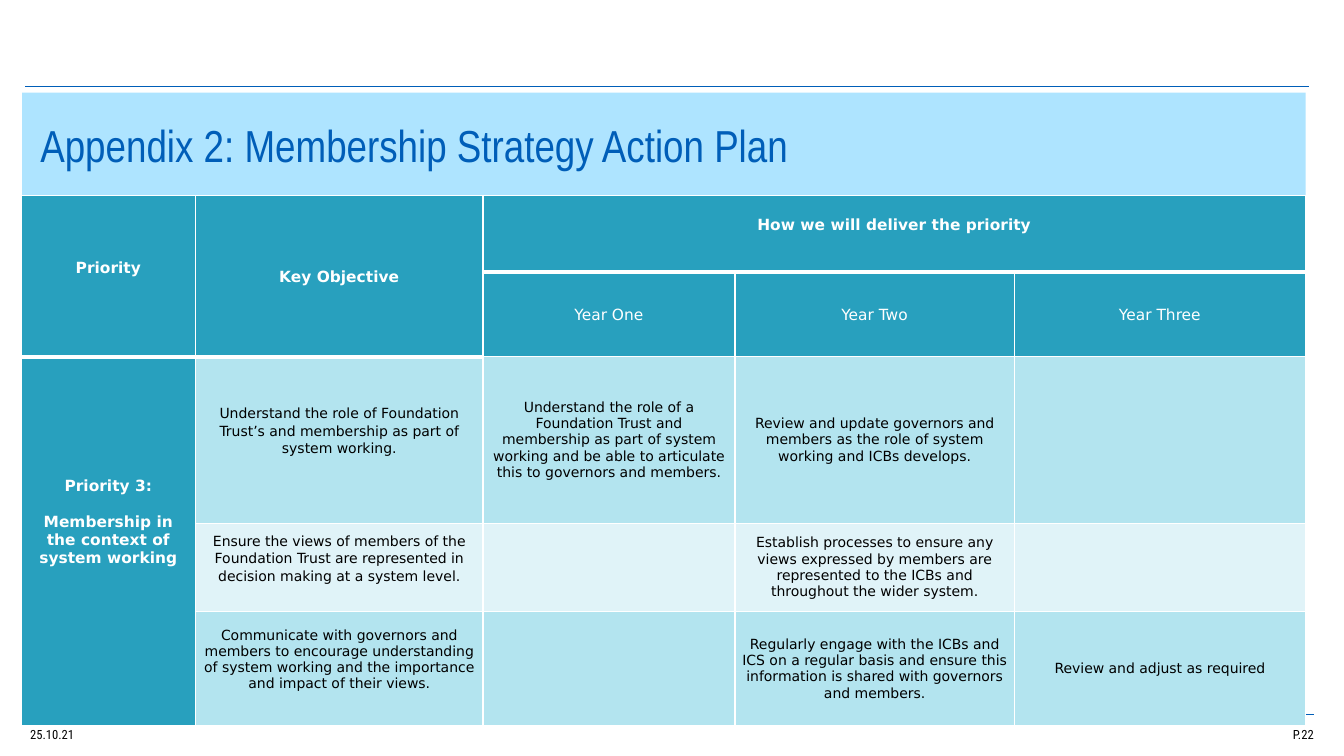
from pptx import Presentation
from pptx.dml.color import RGBColor
from pptx.enum.shapes import MSO_CONNECTOR as Conn, MSO_SHAPE as Shape
from pptx.enum.text import MSO_ANCHOR as Anchor, MSO_AUTO_SIZE as Fit, PP_ALIGN as Align
from pptx.oxml import parse_xml
from pptx.oxml.ns import nsdecls
from pptx.util import Inches, Pt

HUES = {"blue": "005EB8", "sky": "AEE4FF", "teal": "28A0BE", "pale": "B3E4EF",
        "mist": "E0F3F8", "white": "FFFFFF", "black": "000000"}


def hue(name):
    return RGBColor.from_string(HUES[name])


def style(par, face, size, name, bold=False, align=Align.LEFT):
    par.alignment = align
    for run in par.runs:
        font = run.font
        font.name, font.size, font.bold = face, Pt(size), bold
        font.color.rgb = hue(name)


prs = Presentation()
prs.slide_width, prs.slide_height = Inches(13.33), Inches(7.5)
slide = prs.slides.add_slide(prs.slide_layouts[5])
shapes = slide.shapes

# Rules above and below the content
for left, top in [(0.25, 0.86), (0.3, 7.09)]:
    rule = shapes.add_connector(Conn.STRAIGHT, Inches(left), Inches(top),
                                Inches(left + 12.73), Inches(top))
    rule.line.color.rgb = hue("blue")
    rule.line.width = Pt(1)
    rule._element.spPr.append(parse_xml(f"<a:effectLst {nsdecls('a')}/>"))

# Date and page number
for left, text, align in [(0.3, "25.10.21", Align.LEFT), (11.67, "P.22", Align.RIGHT)]:
    box = shapes.add_textbox(Inches(left), Inches(7.2), Inches(1.36), Inches(0.21))
    frame = box.text_frame
    frame.word_wrap = True
    frame.vertical_anchor = Anchor.MIDDLE
    frame.margin_left = frame.margin_right = 0
    frame.text = text
    par = frame.paragraphs[0]
    par.line_spacing = 0.7
    style(par, "Roboto Condensed", 9, "black", align=align)

# Light panel with the title on top
panel = shapes.add_shape(Shape.RECTANGLE, Inches(0.22), Inches(0.92),
                         Inches(12.73), Inches(6.28))
panel.shadow.inherit = False
panel.fill.solid()
panel.fill.fore_color.rgb = hue("sky")
panel.line.fill.background()

title = shapes.title
title.left, title.top = Inches(0.3), Inches(1.11)
title.width, title.height = Inches(11.45), Inches(0.64)
title.text_frame.text = "Appendix 2: Membership Strategy Action Plan"
title.text_frame.auto_size = Fit.NONE
title.text_frame.vertical_anchor = Anchor.MIDDLE
style(title.text_frame.paragraphs[0], "Arial Narrow", 32, "blue")
panel._element.addnext(title._element)

# Action plan table
WIDE = [1.73, 2.85, 2.5, 2.77, 2.89]
HIGH = [0.76, 0.84, 1.65, 0.88, 1.13]
ROWS = [
    ["Priority", "Key Objective", "How we will deliver the priority", "", ""],
    ["", "", "Year One", "Year Two", "Year Three"],
    ["Priority 3:\nMembership in the context of system working",
     "Understand the role of Foundation Trust’s and membership as part of system working.",
     "Understand the role of a Foundation Trust and membership as part of system working "
     "and be able to articulate this to governors and members.",
     "Review and update governors and members as the role of system working and ICBs develops.",
     ""],
    ["", "Ensure the views of members of the Foundation Trust are represented in decision "
     "making at a system level.", "",
     "Establish processes to ensure any views expressed by members are represented to the "
     "ICBs and throughout the wider system.", ""],
    ["", "Communicate with governors and members to encourage understanding of system "
     "working and the importance and impact of their views.", "",
     "Regularly engage with the ICBs and ICS on a regular basis and ensure this information "
     "is shared with governors and members.", "Review and adjust as required"],
]
# Bottom margins that lift the text above the middle
LIFT = {(0, 0): 0.18, (0, 2): 0.18, (2, 0): 0.38, (2, 1): 0.18, (3, 1): 0.18, (4, 1): 0.18}

grid = shapes.add_table(5, 5, Inches(0.21), Inches(1.94),
                        Inches(sum(WIDE)), Inches(sum(HIGH))).table
for col, wide in zip(grid.columns, WIDE):
    col.width = Inches(wide)
for row, high in zip(grid.rows, HIGH):
    row.height = Inches(high)
for r1, c1, r2, c2 in [(0, 0, 1, 0), (0, 1, 1, 1), (0, 2, 0, 4), (2, 0, 4, 0)]:
    grid.cell(r1, c1).merge(grid.cell(r2, c2))

for r, texts in enumerate(ROWS):
    for c, text in enumerate(texts):
        cell = grid.cell(r, c)
        head = r < 2 or c == 0
        cell.fill.solid()
        cell.fill.fore_color.rgb = hue("teal" if head else "mist" if r == 3 else "pale")

        # White borders, thick below the header cells
        thick = r == 0 or (r == 1 and c < 2)
        props = cell._tc.get_or_add_tcPr()
        for i, side in enumerate("LRTB"):
            width = Pt(3 if thick and side == "B" else 1)
            props.insert(i, parse_xml(
                f'<a:ln{side} {nsdecls("a")} w="{width}"><a:solidFill>'
                f'<a:srgbClr val="{HUES["white"]}"/></a:solidFill></a:ln{side}>'))

        # Centred text
        cell.vertical_anchor = Anchor.MIDDLE
        cell.margin_left = cell.margin_right = Inches(0.07 if r < 3 else 0.04)
        cell.margin_top = 0
        cell.margin_bottom = Inches(LIFT.get((r, c), 0))
        if not text:
            continue
        cell.text_frame.text = text
        for n, par in enumerate(cell.text_frame.paragraphs):
            style(par, "DejaVu Sans", 11 if head else 10, "white" if head else "black",
                  head and r != 1, Align.CENTER)
            if n:
                par.space_before = Pt(13)
            if r < 2 or (c == 1 and r < 4):
                par.line_spacing = 1.07

prs.save("out.pptx")
